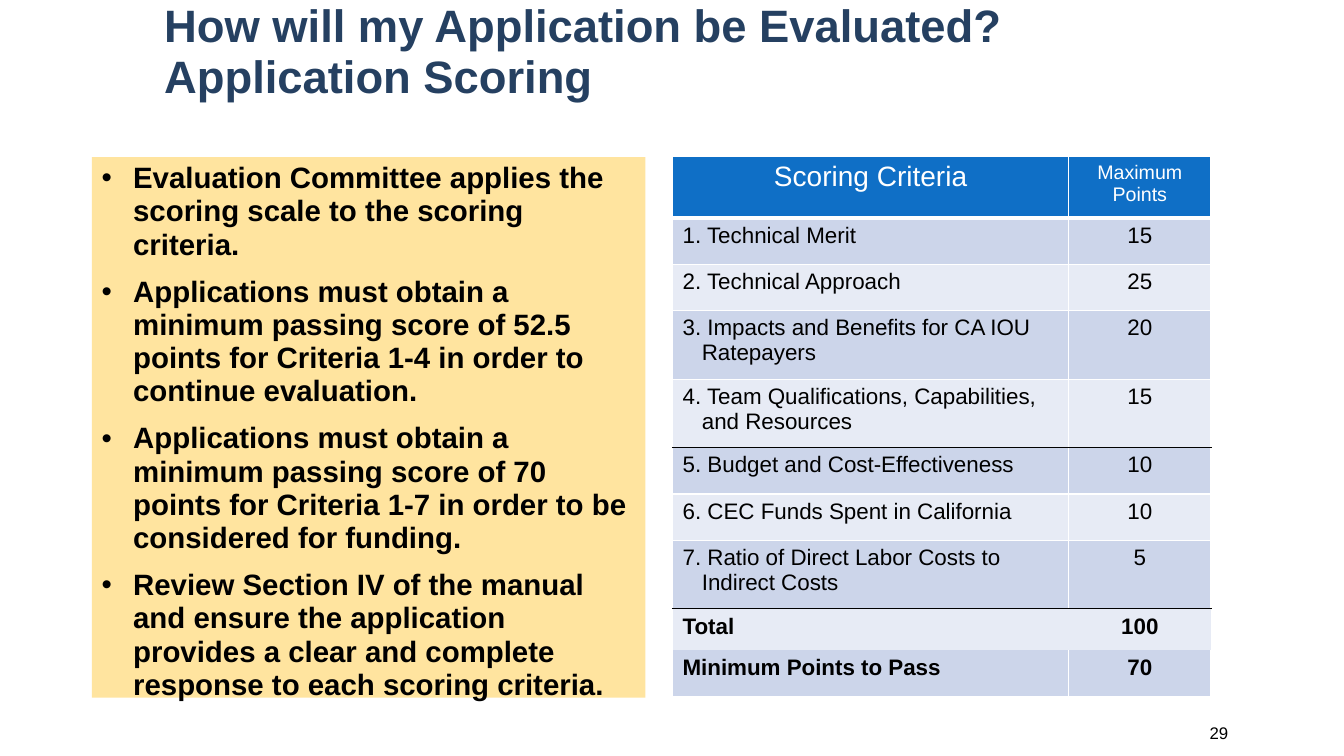
from pptx import Presentation
from pptx.dml.color import RGBColor
from pptx.enum.text import MSO_ANCHOR, PP_ALIGN
from pptx.oxml import parse_xml
from pptx.oxml.ns import nsdecls
from pptx.util import Inches, Pt

THEME = {
    "font": "Arial", "navy": "254061", "black": "000000", "white": "FFFFFF",
    "sand": "FFE49F", "blue": "0F6FC6", "bands": ("CCD5EA", "E7EBF5"),
    "title": 32.4, "body": 21, "head": 20, "note": 14, "cell": 16, "page": 12,
    "lead": 0.94, "gap": 10,
}

deck = Presentation()
deck.slide_width, deck.slide_height = Inches(13.33), Inches(7.5)
slide = deck.slides.add_slide(deck.slide_layouts[6])


def place(x, y, w, h):
    """Turn percentages of the slide into lengths."""
    wide, high = deck.slide_width, deck.slide_height
    return [int(wide * x / 100), int(high * y / 100),
            int(wide * w / 100), int(high * h / 100)]


def style(frame, size, color, bold=False, align=PP_ALIGN.LEFT):
    frame.word_wrap = True
    for para in frame.paragraphs:
        para.alignment = align
        for run in para.runs:
            run.font.name, run.font.size = THEME["font"], Pt(size)
            run.font.bold = bold
            run.font.color.rgb = RGBColor.from_string(color)


# Title: the deep lower inset lifts the two lines
title = slide.shapes.add_textbox(*place(11.48, 3.47, 81.7, 15.2)).text_frame
title.text = "How will my Application be Evaluated?\vApplication Scoring"
title.vertical_anchor = MSO_ANCHOR.MIDDLE
title.margin_bottom = place(0, 0, 0, 8.93)[3]
title.paragraphs[0].line_spacing = THEME["lead"]
style(title, THEME["title"], THEME["navy"], True)

# Bulleted rules
panel = slide.shapes.add_textbox(*place(6.83, 20.8, 41.19, 71.47))
panel.fill.solid()
panel.fill.fore_color.rgb = RGBColor.from_string(THEME["sand"])
rules = panel.text_frame
rules.text = "\n".join([
    "Evaluation Committee applies the scoring scale to the scoring criteria.",
    "Applications must obtain a minimum passing score of 52.5 points for "
    "Criteria 1-4 in order to continue evaluation.",
    "Applications must obtain a minimum passing score of 70 points for "
    "Criteria 1-7 in order to be considered for funding.",
    "Review Section IV of the manual and ensure the application provides a "
    "clear and complete response to each scoring criteria.",
])
hang = place(0, 0, 2.34, 0)[2]
for i, para in enumerate(rules.paragraphs):
    para.line_spacing = THEME["lead"]
    para.space_before = Pt(THEME["gap"] if i else 0)
    props = para._p.get_or_add_pPr()
    props.set("marL", str(hang))
    props.set("indent", str(-hang))
    props.append(parse_xml(f'<a:buFont {nsdecls("a")} typeface="Arial"/>'))
    props.append(parse_xml(f'<a:buChar {nsdecls("a")} char="•"/>'))
style(rules, THEME["body"], THEME["black"], True)

# Scoring table: label, points, row height in percent
rows = [
    ("Scoring Criteria", "Maximum Points", 8.16),
    ("1. Technical Merit", "15", 6.13),
    ("2. Technical Approach", "25", 6.13),
    ("3. Impacts and Benefits for CA IOU Ratepayers", "20", 9.07),
    ("4. Team Qualifications, Capabilities, and Resources", "15", 9.07),
    ("5. Budget and Cost-Effectiveness", "10", 6.13),
    ("6. CEC Funds Spent in California", "10", 6.13),
    ("7. Ratio of Direct Labor Costs to Indirect Costs", "5", 9.07),
    ("Total", "100", 5.47),
    ("Minimum Points to Pass", "70", 6.13),
]
ruled = (4, 7)  # rows with a black line below
total = 8       # row without white lines
grid = slide.shapes.add_table(
    len(rows), 2, *place(50.04, 20.67, 40.06, 71.47)).table
for col, share in zip(grid.columns, (29.48, 10.58)):
    col.width = place(0, 0, share, 0)[2]
inset = place(0, 0, 1.43, 0)[2]

for r, (label, points, high) in enumerate(rows):
    grid.rows[r].height = place(0, 0, 0, high)[3]
    for c, text in enumerate((label, points)):
        cell = grid.cell(r, c)
        cell.text = text
        cell.fill.solid()
        cell.fill.fore_color.rgb = RGBColor.from_string(
            THEME["bands"][(r - 1) % 2] if r else THEME["blue"])
        size = THEME["cell"] if r else THEME[("head", "note")[c]]
        style(cell.text_frame, size, THEME["black" if r else "white"],
              r >= total, PP_ALIGN.CENTER if c or not r else PP_ALIGN.LEFT)
        if 0 < r < total and c == 0:
            props = cell.text_frame.paragraphs[0]._p.get_or_add_pPr()
            props.set("marL", str(inset))
            props.set("indent", str(-inset))

        # Cell borders, put ahead of the fill
        for k, side in enumerate("LRTB"):
            dark = (side == "B" and r in ruled) or (side == "T" and r - 1 in ruled)
            bare = (r == total and side != "T") or (r == total + 1 and side == "T")
            thick = (side == "B" and r == 0) or (side == "T" and r == 1)
            tone = THEME["black" if dark else "white"]
            paint = "<a:noFill/>" if bare else (
                f'<a:solidFill><a:srgbClr val="{tone}"/></a:solidFill>')
            cell._tc.get_or_add_tcPr().insert(k, parse_xml(
                f'<a:ln{side} {nsdecls("a")} w="{Pt(3 if thick else 1)}">'
                f'{paint}</a:ln{side}>'))

# Page number
page = slide.shapes.add_textbox(*place(77.64, 94.27, 14.48, 5.33)).text_frame
page.text = "29"
page.vertical_anchor = MSO_ANCHOR.MIDDLE
style(page, THEME["page"], THEME["black"], align=PP_ALIGN.RIGHT)

deck.save("out.pptx")
